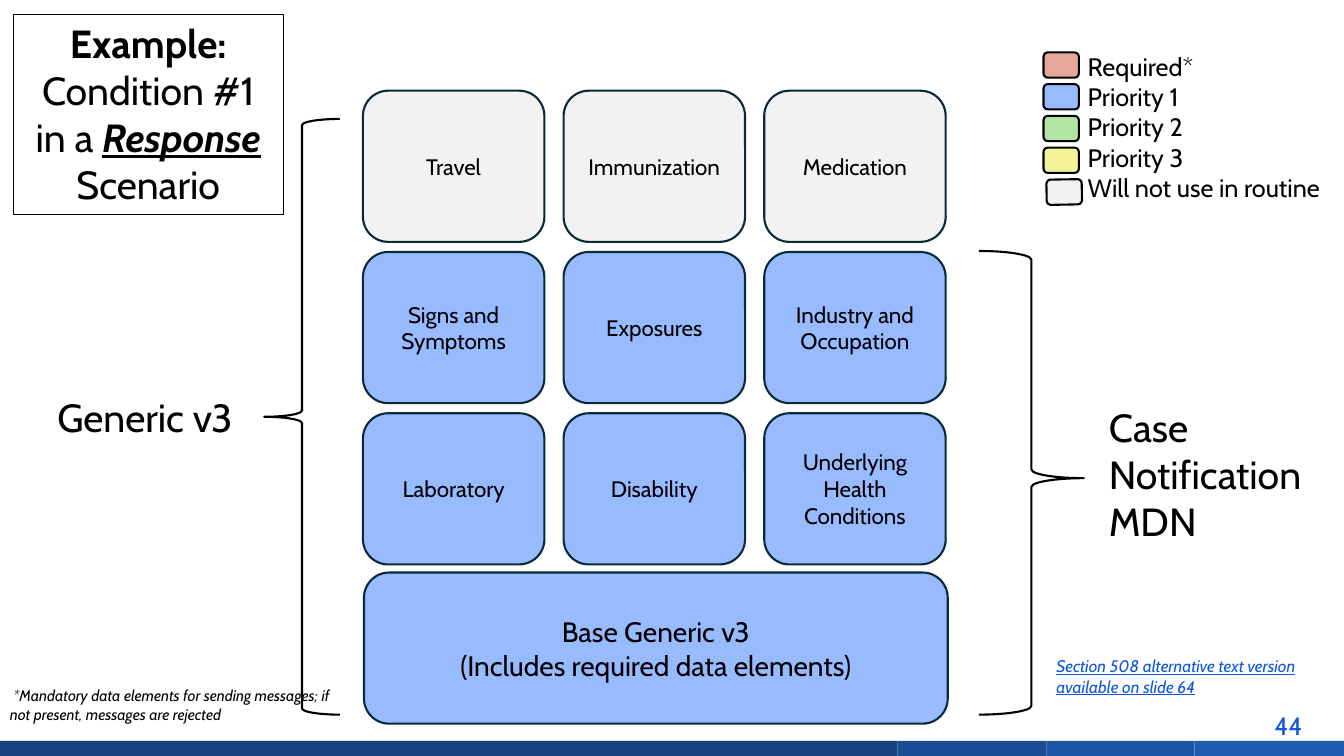
from typing import NamedTuple

from pptx import Presentation, util as u
from pptx.dml.color import RGBColor
from pptx.enum import shapes, text

FONT = "Cabin"
BLACK = RGBColor(0x00, 0x00, 0x00)
NAVY = RGBColor(0x09, 0x2A, 0x39)
LINK = RGBColor(0x0F, 0x56, 0xDC)
GREY = RGBColor(0xF2, 0xF2, 0xF2)
BLUE = RGBColor(0x98, 0xBA, 0xFF)
RED = RGBColor(0xE6, 0xA7, 0x98)
GREEN = RGBColor(0xB4, 0xE5, 0xA2)
YELLOW = RGBColor(0xF1, 0xF3, 0x95)
BAR_DARK = RGBColor(0x16, 0x43, 0x80)
BAR_DEEP = RGBColor(0x19, 0x4D, 0x93)
BAR_MID = RGBColor(0x1C, 0x56, 0xA4)
BAR_LIGHT = RGBColor(0x1E, 0x5D, 0xB2)

KIND = shapes.MSO_SHAPE
MID = text.MSO_ANCHOR.MIDDLE
LEFT, CENTER = text.PP_ALIGN.LEFT, text.PP_ALIGN.CENTER


class Box(NamedTuple):
    x: float
    y: float
    w: float
    h: float


class Run(NamedTuple):
    words: str
    bold: bool = False
    slant: bool = False
    under: bool = False


class Label(NamedTuple):
    box: Box
    size: int
    lines: list[list[Run]]
    color: RGBColor = BLACK


class Key(NamedTuple):
    name: str
    fill: RGBColor
    shift: float = 0
    turn: float = 0


def place(box: Box) -> list[int]:
    return [u.Inches(side) for side in box]


def write(frame, lines: list[list[Run]], size: int, color: RGBColor, align) -> None:
    frame.word_wrap = True
    for i, line in enumerate(lines):
        para = frame.add_paragraph() if i else frame.paragraphs[0]
        para.alignment = align
        for part in line:
            run = para.add_run()
            run.text = part.words
            font = run.font
            font.name, font.size = FONT, u.Pt(size)
            font.bold, font.italic, font.underline = part.bold, part.slant, part.under
            font.color.rgb = color


def add_label(slide, label: Label, align=LEFT):
    area = slide.shapes.add_textbox(*place(label.box))
    write(area.text_frame, label.lines, label.size, label.color, align)
    return area


def add_form(slide, kind, box: Box, fill: RGBColor | None, line: RGBColor | None):
    form = slide.shapes.add_shape(kind, *place(box))
    form.shadow.inherit = False
    if fill is None:
        form.fill.background()
    else:
        form.fill.solid()
        form.fill.fore_color.rgb = fill
    if line is None:
        form.line.fill.background()
    else:
        form.line.color.rgb = line
        form.line.width = u.Pt(1.5)
    return form


def add_card(slide, box: Box, fill: RGBColor, size: int, names: list[str]) -> None:
    card = add_form(slide, KIND.ROUNDED_RECTANGLE, box, fill, NAVY)
    card.text_frame.vertical_anchor = MID
    write(card.text_frame, [[Run(name)] for name in names], size, BLACK, CENTER)


BARS = [(0, 8.9, BAR_DARK), (8.9, 1.48, BAR_DEEP),
        (10.38, 1.47, BAR_MID), (11.85, 1.48, BAR_LIGHT)]

ROWS = [
    (GREY, ["Travel", "Immunization", "Medication"]),
    (BLUE, ["Signs and Symptoms", "Exposures", "Industry and Occupation"]),
    (BLUE, ["Laboratory", "Disability", "Underlying Health Conditions"]),
]

KEYS = [
    Key("Required*", RED),
    Key("Priority 1", BLUE),
    Key("Priority 2", GREEN),
    Key("Priority 3", YELLOW),
    Key("Will not use in routine", GREY, 0.03, 359),
]

TITLE = Label(Box(0.13, 0.14, 2.68, 1.99), 28, [[
    Run("Example: ", bold=True), Run("Condition #1 in a "),
    Run("Response", bold=True, slant=True, under=True), Run(" Scenario")]])

LABELS = [
    Label(Box(0.47, 3.85, 2.04, 0.57), 28, [[Run("Generic v3")]]),
    Label(Box(10.9, 3.95, 2.22, 1.51), 28, [[Run("Case Notification MDN")]]),
    Label(Box(10.69, 0.46, 2.64, 1.65), 18, [[Run(key.name)] for key in KEYS]),
    Label(Box(0, 6.76, 3.38, 0.5), 11, [[
        Run(" *Mandatory data elements for sending messages; "
            "if not present, messages are rejected", slant=True)]]),
    Label(Box(10.38, 6.46, 2.9, 0.5), 12, [
        [Run("Section 508 alternative text version", slant=True, under=True)],
        [Run("available on slide 64", slant=True, under=True)]], LINK),
    Label(Box(12.54, 7, 0.54, 0.34), 18, [[Run("44")]], LINK),
]


def main() -> None:
    deck = Presentation()
    deck.slide_width, deck.slide_height = u.Inches(13.33), u.Inches(7.5)
    slide = deck.slides.add_slide(deck.slide_layouts[6])

    # Footer band
    for x, wide, fill in BARS:
        add_form(slide, KIND.RECTANGLE, Box(x, 7.35, wide, 0.15), fill, None)

    # Framed title
    title = add_label(slide, TITLE, CENTER)
    title.line.color.rgb = BLACK
    title.line.width = u.Pt(0.75)

    # Module cards on a three by three grid, with the base below
    for row, (fill, names) in enumerate(ROWS):
        for col, name in enumerate(names):
            spot = Box(3.6 + 1.99 * col, 0.9 + 1.6 * row, 1.8, 1.5)
            add_card(slide, spot, fill, 16, [name])
    add_card(slide, Box(3.61, 5.68, 5.79, 1.5), BLUE, 20,
             ["Base Generic v3", "(Includes required data elements)"])

    # Braces
    add_form(slide, KIND.LEFT_BRACE, Box(2.62, 1.18, 0.75, 5.91), None, BLACK)
    brace = add_form(slide, KIND.RIGHT_BRACE, Box(9.71, 2.49, 1.04, 4.6), None, BLACK)
    brace.adjustments[1] = 0.49

    # Legend swatches
    for i, key in enumerate(KEYS):
        spot = Box(10.35 + key.shift, 0.52 + 0.315 * i, 0.35, 0.25)
        swatch = add_form(slide, KIND.ROUNDED_RECTANGLE, spot, key.fill, BLACK)
        swatch.rotation = key.turn

    # Captions, legend names and notes
    for label in LABELS:
        add_label(slide, label)

    deck.save("out.pptx")


if __name__ == "__main__":
    main()
